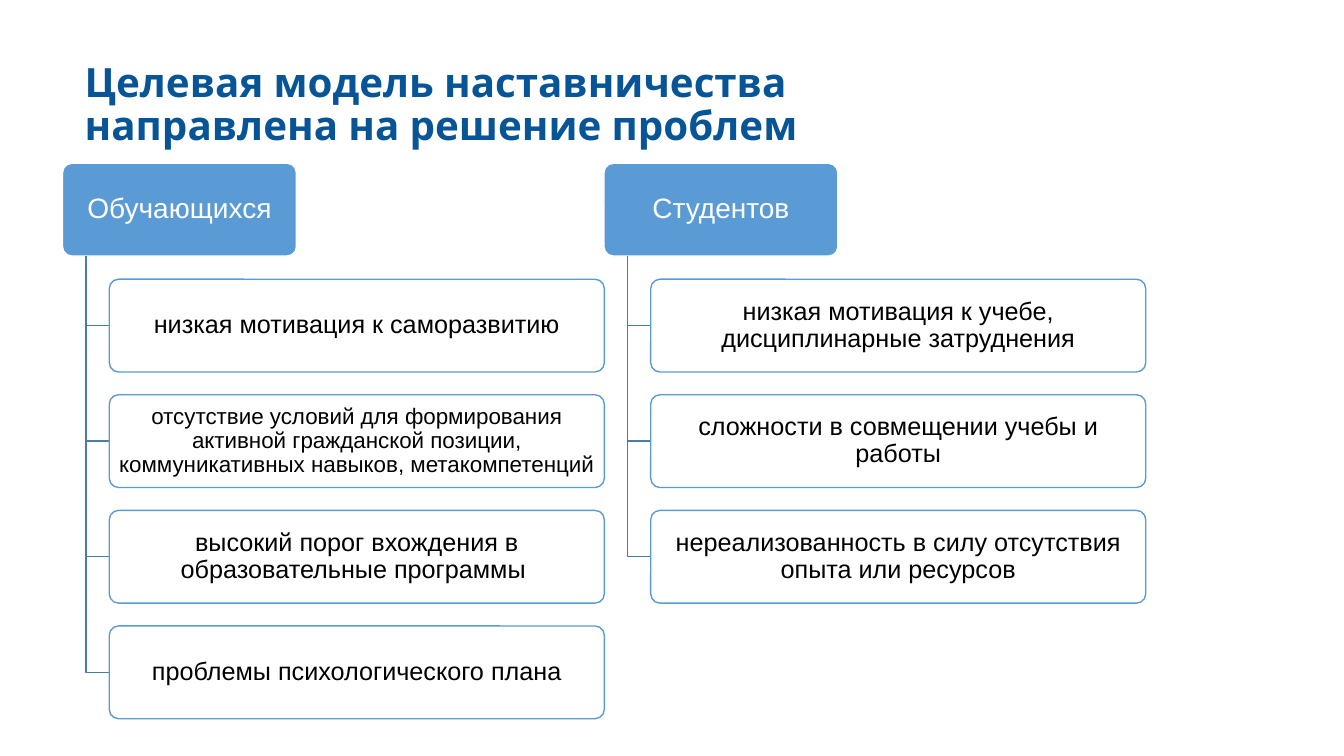
from dataclasses import dataclass

from lxml.etree import SubElement
from pptx import Presentation
from pptx.dml.color import RGBColor
from pptx.enum.shapes import MSO_SHAPE as Shape
from pptx.enum.text import MSO_ANCHOR as Anchor
from pptx.enum.text import MSO_AUTO_SIZE as AutoSize
from pptx.enum.text import PP_ALIGN as Align
from pptx.oxml.ns import qn
from pptx.util import Inches, Pt


@dataclass(frozen=True)
class Theme:
    title_color: str = "075597"
    accent: str = "5B9BD5"
    branch: str = "497CAB"
    white: str = "FFFFFF"
    black: str = "000000"
    title_font: str = "Karla"
    body_font: str = "Arial"
    title_size: float = 28.8
    heading_size: int = 20
    card_size: int = 18
    small_size: int = 16
    line_width: int = 1


THEME = Theme()

# Layout in inches
BOX_HEIGHT = 0.92
HEADING_WIDTH = 2.32
CARD_WIDTH = 4.91
COLUMN_LEFT, COLUMN_STEP = 0.62, 5.37
HEADING_TOP = 1.62
CARD_TOP, CARD_STEP = 2.77, (6.21 - 2.77) / 3
INDENT = HEADING_WIDTH / 10

# Each column: heading, then cards as (text, type size)
COLUMNS = [
    ("Обучающихся", [
        ("низкая мотивация к саморазвитию", THEME.card_size),
        ("отсутствие условий для формирования активной гражданской позиции, "
         "коммуникативных навыков, метакомпетенций", THEME.small_size),
        ("высокий порог вхождения в образовательные программы ", THEME.card_size),
        ("проблемы психологического плана", THEME.card_size),
    ]),
    ("Студентов", [
        ("низкая мотивация к учебе, дисциплинарные затруднения", THEME.card_size),
        ("сложности в совмещении учебы и работы", THEME.card_size),
        ("нереализованность в силу отсутствия опыта или ресурсов", THEME.card_size),
    ]),
]


def rgb(color):
    return RGBColor.from_string(color)


def write_text(shape, text, *, size, color, font=THEME.body_font, bold=False,
               align=Align.CENTER, inset=(0.04, 0.03)):
    """Fill a shape with one formatted paragraph."""
    frame = shape.text_frame
    frame.word_wrap = True
    frame.auto_size = AutoSize.NONE
    frame.vertical_anchor = Anchor.MIDDLE
    frame.margin_left = frame.margin_right = Inches(inset[0])
    frame.margin_top = frame.margin_bottom = Inches(inset[1])
    para = frame.paragraphs[0]
    para.alignment = align
    para.line_spacing = 0.9
    span = para.add_run()
    span.text = text
    span.font.name = font
    span.font.size = Pt(size)
    span.font.bold = bold
    span.font.color.rgb = rgb(color)


def set_line(shape, color):
    shape.shadow.inherit = False
    shape.line.color.rgb = rgb(color)
    shape.line.width = Pt(THEME.line_width)


def add_title(page, text):
    title = page.shapes.title
    title.left, title.top = Inches(0.74), Inches(0.58)
    title.width, title.height = Inches(8.32), Inches(0.94)
    write_text(title, text, size=THEME.title_size, color=THEME.title_color,
               font=THEME.title_font, bold=True, align=Align.LEFT,
               inset=(0.1, 0.05))


def add_box(page, left, top, width, *, fill, line, opacity=100):
    box = page.shapes.add_shape(Shape.ROUNDED_RECTANGLE, Inches(left), Inches(top),
                                Inches(width), Inches(BOX_HEIGHT))
    box.adjustments[0] = 0.1
    box.fill.solid()
    box.fill.fore_color.rgb = rgb(fill)
    if opacity < 100:
        color = box.fill._xPr.find(qn("a:solidFill"))[0]
        SubElement(color, qn("a:alpha"), val=str(opacity * 1000))
    set_line(box, line)
    return box


def add_branch(page, left, top, right, bottom):
    """Draw an elbow from a heading down to the side of a card."""
    corners = [(Inches(x), Inches(y)) for x, y in ((left, bottom), (right, bottom))]
    builder = page.shapes.build_freeform(Inches(left), Inches(top))
    builder.add_line_segments(corners, close=False)
    branch = builder.convert_to_shape()
    branch.fill.background()
    set_line(branch, THEME.branch)


def add_column(page, left, heading, cards):
    box = add_box(page, left, HEADING_TOP, HEADING_WIDTH,
                  fill=THEME.accent, line=THEME.white)
    write_text(box, heading, size=THEME.heading_size, color=THEME.white)

    trunk, card_left = left + INDENT, left + 2 * INDENT
    for row, (text, size) in enumerate(cards):
        top = CARD_TOP + row * CARD_STEP
        add_branch(page, trunk, HEADING_TOP + BOX_HEIGHT,
                   card_left, top + BOX_HEIGHT / 2)
        card = add_box(page, card_left, top, CARD_WIDTH, fill=THEME.white,
                       line=THEME.accent, opacity=90)
        inset = (0.03, 0.02) if size == THEME.small_size else (0.04, 0.03)
        write_text(card, text, size=size, color=THEME.black, inset=inset)


def main():
    deck = Presentation()
    deck.slide_width, deck.slide_height = Inches(13.33), Inches(7.5)
    page = deck.slides.add_slide(deck.slide_layouts[5])

    add_title(page, "Целевая модель наставничества направлена на решение проблем")
    for index, (heading, cards) in enumerate(COLUMNS):
        add_column(page, COLUMN_LEFT + index * COLUMN_STEP, heading, cards)

    deck.save("out.pptx")


if __name__ == "__main__":
    main()
